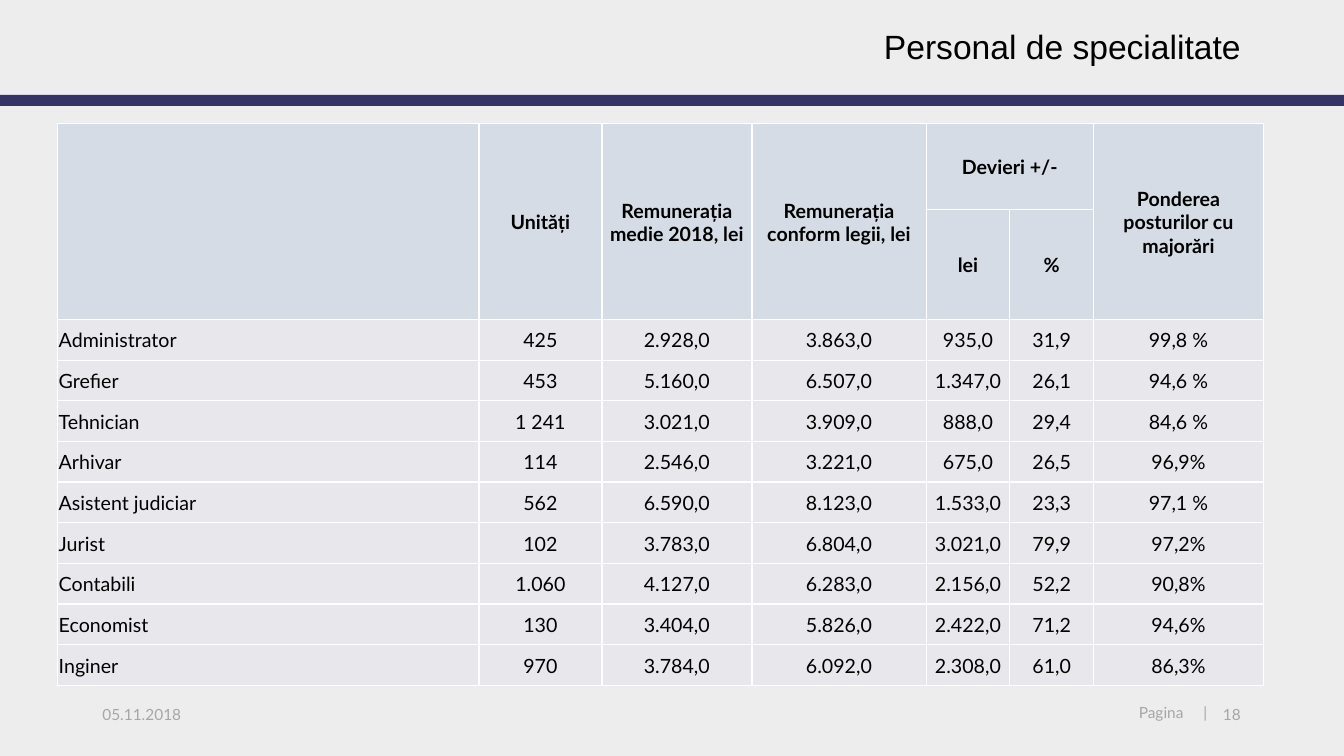
from lxml.etree import SubElement
from pptx import Presentation
from pptx.dml.color import RGBColor
from pptx.enum.shapes import MSO_SHAPE
from pptx.enum.text import MSO_ANCHOR, PP_ALIGN
from pptx.oxml.ns import qn
from pptx.util import Cm, Pt

BLACK, GREY, WHITE = "000000", "A6A6A6", "FFFFFF"
HEADER_FILL, BODY_FILL = "D6DCE5", "E8E8EC"
COLUMN_WIDTHS = [10.62, 3.1, 3.78, 4.39, 2.11, 2.11, 4.28]
ROW_HEIGHTS = [2.16, 2.77] + [1.025] * 9
HEADERS = [
    ["", "Unități", "Remunerația medie 2018, lei", "Remunerația conform legii, lei",
     "Devieri +/-", "", "Ponderea posturilor cu majorări"],
    ["", "", "", "", "lei", "%", ""],
]
POSITIONS = [
    ["Administrator", "425", "2.928,0", "3.863,0", "935,0", "31,9", "99,8 %"],
    ["Grefier", "453", "5.160,0", "6.507,0", "1.347,0", "26,1", "94,6 %"],
    ["Tehnician", "1 241", "3.021,0", "3.909,0", "888,0", "29,4", "84,6 %"],
    ["Arhivar", "114", "2.546,0", "3.221,0", "675,0", "26,5", "96,9%"],
    ["Asistent judiciar", "562", "6.590,0", "8.123,0", "1.533,0", "23,3", "97,1 %"],
    ["Jurist", "102", "3.783,0", "6.804,0", "3.021,0", "79,9", "97,2%"],
    ["Contabili", "1.060", "4.127,0", "6.283,0", "2.156,0", "52,2", "90,8%"],
    ["Economist", "130", "3.404,0", "5.826,0", "2.422,0", "71,2", "94,6%"],
    ["Inginer", "970", "3.784,0", "6.092,0", "2.308,0", "61,0", "86,3%"],
]


def paint(fill, color):
    fill.solid()
    fill.fore_color.rgb = RGBColor.from_string(color)


def add_run(paragraph, text, size, color=BLACK, font="Lato", bold=False):
    run = paragraph.add_run()
    run.text = text
    run.font.name = font
    run.font.size = Pt(size)
    run.font.bold = bold
    run.font.color.rgb = RGBColor.from_string(color)


def add_title(slide, text):
    title = slide.shapes.title
    title.left, title.top, title.width, title.height = Cm(17.63), Cm(0.74), Cm(13.89), Cm(0.97)
    frame = title.text_frame
    frame.vertical_anchor = MSO_ANCHOR.MIDDLE
    paragraph = frame.paragraphs[0]
    paragraph.alignment = PP_ALIGN.RIGHT
    paragraph.line_spacing = 0.9
    add_run(paragraph, text, 24, font="Arial")


def add_band(slide, top, width, height, color):
    band = slide.shapes.add_shape(MSO_SHAPE.RECTANGLE, 0, top, width, height)
    band.shadow.inherit = False
    paint(band.fill, color)
    band.line.fill.background()


def add_footer(slide, text, left, width, align=PP_ALIGN.LEFT, tab=None):
    frame = slide.shapes.add_textbox(Cm(left), Cm(17.65), Cm(width), Cm(1)).text_frame
    frame.word_wrap = True
    paragraph = frame.paragraphs[0]
    paragraph.alignment = align
    if tab is not None:
        paragraph.line_spacing = 0.9
        stops = SubElement(paragraph._p.get_or_add_pPr(), qn("a:tabLst"))
        SubElement(stops, qn("a:tab"), pos=str(Cm(tab)), algn="l")
    add_run(paragraph, text, 11, GREY)


def add_borders(cell, color):
    properties = cell._tc.get_or_add_tcPr()
    for side in ("a:lnL", "a:lnR", "a:lnT", "a:lnB"):
        border = SubElement(properties, qn(side), w=str(Pt(1)))
        SubElement(SubElement(border, qn("a:solidFill")), qn("a:srgbClr"), val=color)


def fill_cell(cell, text, is_header, is_label):
    add_borders(cell, WHITE)
    paint(cell.fill, HEADER_FILL if is_header else BODY_FILL)
    cell.vertical_anchor = MSO_ANCHOR.MIDDLE
    cell.margin_left = cell.margin_right = cell.margin_top = Cm(0.03)
    cell.margin_bottom = 0
    if text:
        paragraph = cell.text_frame.paragraphs[0]
        paragraph.alignment = PP_ALIGN.LEFT if is_label else PP_ALIGN.CENTER
        add_run(paragraph, text, 14, bold=is_header)


def add_pay_table(slide):
    rows = HEADERS + POSITIONS
    table = slide.shapes.add_table(
        len(rows), len(COLUMN_WIDTHS), Cm(1.45), Cm(3.12),
        Cm(sum(COLUMN_WIDTHS)), Cm(sum(ROW_HEIGHTS))).table
    table.first_row = table.horz_banding = False
    for column, width in zip(table.columns, COLUMN_WIDTHS):
        column.width = Cm(width)
    for row, height in zip(table.rows, ROW_HEIGHTS):
        row.height = Cm(height)
    for r, texts in enumerate(rows):
        for c, text in enumerate(texts):
            fill_cell(table.cell(r, c), text, r < len(HEADERS), c == 0)
    for c in (0, 1, 2, 3, 6):
        table.cell(0, c).merge(table.cell(1, c))
    table.cell(0, 4).merge(table.cell(0, 5))


def main():
    deck = Presentation()
    deck.slide_width, deck.slide_height = Cm(33.87), Cm(19.05)
    slide = deck.slides.add_slide(deck.slide_layouts[5])
    paint(slide.background.fill, "EDEDED")
    add_band(slide, Cm(2.39), deck.slide_width, Cm(0.28), "333366")
    add_title(slide, "Personal de specialitate")
    add_pay_table(slide)
    add_footer(slide, "05.11.2018", 2.33, 7.62)
    add_footer(slide, "Pagina\t|", 28.45, 2.4, tab=1.63)
    add_footer(slide, "18", 30.48, 1.04, PP_ALIGN.RIGHT)
    deck.save("out.pptx")


if __name__ == "__main__":
    main()
